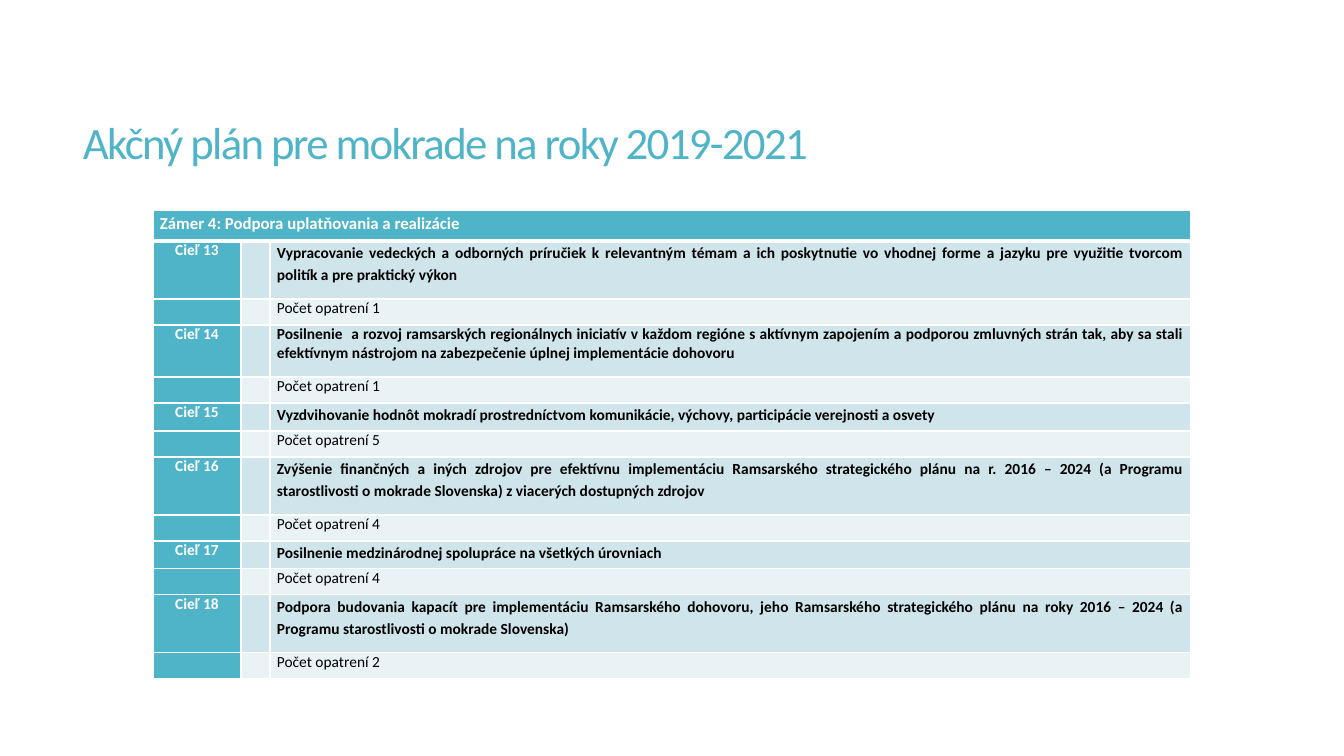
from pptx import Presentation
from pptx.dml.color import RGBColor
from pptx.enum.text import MSO_ANCHOR, PP_ALIGN
from pptx.oxml import parse_xml
from pptx.oxml.ns import nsdecls
from pptx.util import Pt

SCALE = 914400 / 100.8
HUES = {"teal": "50B4C8", "pale": "D0E5EB", "mist": "E9F2F5",
        "white": "FFFFFF", "black": "000000"}
COLS = (88, 29, 921)
HEAD, COUNT = 31, 26
GOALS = (
    (13, 58, 1.15, 1, "Vypracovanie vedeckých a odborných príručiek k relevantným témam a ich "
     "poskytnutie vo vhodnej forme a jazyku pre využitie tvorcom politík a pre praktický výkon"),
    (14, 52, 1.0, 1, "Posilnenie  a rozvoj ramsarských regionálnych iniciatív v každom regióne "
     "s aktívnym zapojením a podporou zmluvných strán tak, aby sa stali efektívnym nástrojom "
     "na zabezpečenie úplnej implementácie dohovoru"),
    (15, 28, 1.15, 5, "Vyzdvihovanie hodnôt mokradí prostredníctvom komunikácie, výchovy, "
     "participácie verejnosti a osvety"),
    (16, 58, 1.15, 4, "Zvýšenie finančných a iných zdrojov pre efektívnu implementáciu "
     "Ramsarského strategického plánu na r. 2016 – 2024 (a Programu starostlivosti "
     "o mokrade Slovenska) z viacerých dostupných zdrojov"),
    (17, 28, 1.15, 4, "Posilnenie medzinárodnej spolupráce na všetkých úrovniach"),
    (18, 58, 1.15, 2, "Podpora budovania kapacít pre implementáciu Ramsarského dohovoru, jeho "
     "Ramsarského strategického plánu na roky 2016 – 2024 (a Programu starostlivosti "
     "o mokrade Slovenska)"),
)


def px(n):
    return round(n * SCALE)


def apply(item, values):
    for key, value in values.items():
        setattr(item, key, value)


def write(frame, text, size, hue, bold=False, align=PP_ALIGN.JUSTIFY, lead=1.0):
    para = frame.paragraphs[0]
    apply(para, {"alignment": align, "line_spacing": lead})
    run = para.add_run()
    run.text = text
    apply(run.font, {"name": "Calibri", "size": Pt(size), "bold": bold})
    run.font.color.rgb = RGBColor.from_string(HUES[hue])
    return run


def border(cell, side, width):
    cell._tc.get_or_add_tcPr().append(parse_xml(
        f'<a:ln{side} {nsdecls("a")} w="{Pt(width)}"><a:solidFill>'
        f'<a:srgbClr val="{HUES["white"]}"/></a:solidFill></a:ln{side}>'))


def style(cell, hue, row):
    apply(cell, {"margin_left": px(7), "margin_right": px(7),
                 "margin_top": 0, "margin_bottom": 0})
    thick = {(0, "B"), (1, "T")}
    for side in "LRTB":
        border(cell, side, 3 if (row, side) in thick else 1)
    cell.fill.solid()
    cell.fill.fore_color.rgb = RGBColor.from_string(HUES[hue])
    cell.text_frame.paragraphs[0]._p.append(
        parse_xml(f'<a:endParaRPr {nsdecls("a")} sz="1100"/>'))


def add_title(slide):
    box = slide.shapes.add_textbox(px(73), px(55), px(1187), px(182))
    frame = box.text_frame
    apply(frame, {"word_wrap": True, "vertical_anchor": MSO_ANCHOR.MIDDLE})
    run = write(frame, "Akčný plán pre mokrade na roky 2019-2021", 32, "teal",
                align=PP_ALIGN.LEFT, lead=0.85)
    run._r.get_or_add_rPr().set("spc", "-120")


def add_goals(slide):
    highs = [HEAD]
    for goal in GOALS:
        highs += [goal[1], COUNT]
    table = slide.shapes.add_table(len(highs), len(COLS), px(153), px(210),
                                   px(sum(COLS)), px(sum(highs))).table
    apply(table, {"first_row": False, "horz_banding": False})
    for col, wide in zip(table.columns, COLS):
        col.width = px(wide)
    for at, (row, high) in enumerate(zip(table.rows, highs)):
        row.height = px(high)
        band = "pale" if at % 2 else "mist"
        for spot, cell in enumerate(row.cells):
            style(cell, "teal" if at == 0 or spot == 0 else band, at)

    top = table.cell(0, 0)
    top.merge(table.cell(0, 2))
    write(top.text_frame, "Zámer 4: Podpora uplatňovania a realizácie", 12, "white",
          bold=True, lead=1.15)
    for at, (number, high, lead, count, text) in enumerate(GOALS):
        row = 2 * at + 1
        write(table.cell(row, 0).text_frame, f"Cieľ {number}", 11, "white",
              bold=True, align=PP_ALIGN.CENTER)
        write(table.cell(row, 2).text_frame, text, 11, "black", bold=True, lead=lead)
        write(table.cell(row + 1, 2).text_frame, f"Počet opatrení {count}", 11, "black")


def main():
    deck = Presentation()
    apply(deck, {"slide_width": px(1344), "slide_height": px(756)})
    slide = deck.slides.add_slide(deck.slide_layouts[6])
    add_title(slide)
    add_goals(slide)
    deck.save("out.pptx")


if __name__ == "__main__":
    main()
